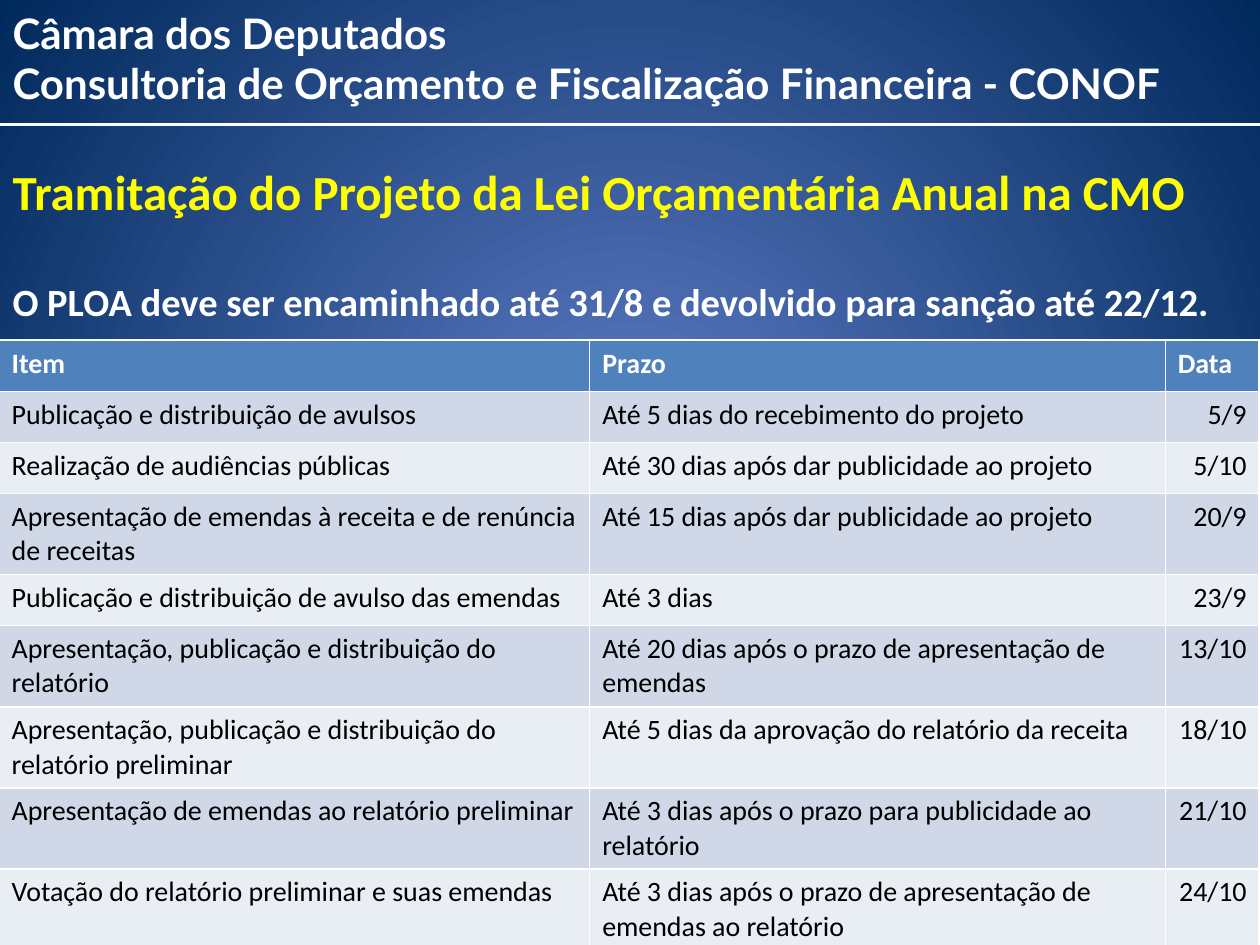
from lxml.etree import SubElement
from pptx import Presentation
from pptx.dml.color import RGBColor
from pptx.enum.shapes import MSO_CONNECTOR
from pptx.enum.text import MSO_ANCHOR, MSO_AUTO_SIZE, PP_ALIGN
from pptx.oxml.ns import qn
from pptx.util import Pt

COLORS = {
    "white": "FFFFFF", "black": "000000", "yellow": "FFFF00",
    "center": "5E7CC5", "edge": "00295C",
    "header": "4F81BD", "odd": "D0D8E8", "even": "E9EDF4",
}
INSTITUTION = [
    "Câmara dos Deputados",
    "Consultoria de Orçamento e Fiscalização Financeira - CONOF",
]
HEADLINE = "Tramitação do Projeto da Lei Orçamentária Anual na CMO"
DEADLINE = "O PLOA deve ser encaminhado até 31/8 e devolvido para sanção até 22/12."
SCHEDULE = [
    ("Item", "Prazo", "Data"),
    ("Publicação e distribuição de avulsos", "Até 5 dias do recebimento do projeto", "5/9"),
    ("Realização de audiências públicas", "Até 30 dias após dar publicidade ao projeto", "5/10"),
    ("Apresentação de emendas à receita e de renúncia de receitas",
     "Até 15 dias após dar publicidade ao projeto", "20/9"),
    ("Publicação e distribuição de avulso das emendas", "Até 3 dias", "23/9"),
    ("Apresentação, publicação e distribuição do relatório",
     "Até 20 dias após o prazo de apresentação de emendas", "13/10"),
    ("Apresentação, publicação e distribuição do relatório preliminar",
     "Até 5 dias da aprovação do relatório da receita", "18/10"),
    ("Apresentação de emendas ao relatório preliminar",
     "Até 3 dias após o prazo para publicidade ao relatório", "21/10"),
    ("Votação do relatório preliminar e suas emendas",
     "Até 3 dias após o prazo de apresentação de emendas ao relatório", "24/10"),
]
WIDTH, HEIGHT = 720, 540
COLUMN_WIDTHS = [337.5, 328.9, 53.7]
ROW_HEIGHT = 29.2
TABLE_TOP = 194.4
RULE_TOP = 71.3


def color(name):
    return RGBColor.from_string(COLORS[name])


def set_all(target, values):
    for name, value in values.items():
        setattr(target, name, value)


def write(para, text, font, size, ink, bold=True, **layout):
    para.text = text
    set_all(para, layout)
    set_all(para.font, {"name": font, "size": Pt(size), "bold": bold})
    para.font.color.rgb = color(ink)


def paint_background(page):
    fill = page.background.fill
    fill.gradient()
    for stop, name in zip(fill.gradient_stops, ("center", "edge")):
        stop.color.rgb = color(name)
    for stop, position in zip(fill.gradient_stops, (0, 1)):
        stop.position = position
    gradient = page.background._cSld.find(".//" + qn("a:gradFill"))
    gradient.remove(gradient.find(qn("a:lin")))
    circle = SubElement(gradient, qn("a:path"), {"path": "circle"})
    SubElement(circle, qn("a:fillToRect"), dict.fromkeys("ltrb", "50000"))


def place(box, top, height):
    set_all(box, {"left": Pt(0), "top": Pt(top), "width": Pt(WIDTH), "height": Pt(height)})
    set_all(box.text_frame, {"word_wrap": True, "auto_size": MSO_AUTO_SIZE.NONE,
                             "vertical_anchor": MSO_ANCHOR.TOP})
    return box.text_frame


def add_institution(page):
    frame = place(page.shapes.title, 0.7, 65.5)
    for index, line in enumerate(INSTITUTION):
        para = frame.add_paragraph() if index else frame.paragraphs[0]
        write(para, line, "Lato", 24, "white", alignment=PP_ALIGN.LEFT, space_before=Pt(0))


def add_body(page):
    frame = place(page.placeholders[1], 88.6, 102.2)
    lines = [(HEADLINE, 28, "yellow", 0), (DEADLINE, 22, "white", 33)]
    for index, (text, size, ink, gap) in enumerate(lines):
        para = frame.add_paragraph() if index else frame.paragraphs[0]
        properties = para._p.get_or_add_pPr()
        set_values = {"marL": "0", "indent": "0"}
        properties.attrib.update(set_values)
        SubElement(properties, qn("a:buNone"))
        write(para, text, "Calibri", size, ink, space_before=Pt(gap))


def add_rule(page):
    rule = page.shapes.add_connector(
        MSO_CONNECTOR.STRAIGHT, Pt(WIDTH), Pt(RULE_TOP), Pt(0), Pt(RULE_TOP))
    rule.line.width = Pt(1.5)
    rule.line.color.rgb = color("white")
    SubElement(rule._element.spPr, qn("a:effectLst"))


def add_schedule(page):
    table = page.shapes.add_table(
        len(SCHEDULE), len(COLUMN_WIDTHS), Pt(-0.5), Pt(TABLE_TOP),
        Pt(sum(COLUMN_WIDTHS)), Pt(ROW_HEIGHT * len(SCHEDULE))).table
    for column, width in zip(table.columns, COLUMN_WIDTHS):
        column.width = Pt(width)
    for row_index, texts in enumerate(SCHEDULE):
        heading = row_index == 0
        band = "header" if heading else ("even", "odd")[row_index % 2]
        for column_index, text in enumerate(texts):
            cell = table.cell(row_index, column_index)
            cell.fill.solid()
            cell.fill.fore_color.rgb = color(band)
            is_date = column_index == 2 and not heading
            write(cell.text_frame.paragraphs[0], text, "Calibri", 16,
                  "white" if heading else "black", heading,
                  alignment=PP_ALIGN.RIGHT if is_date else PP_ALIGN.LEFT)


def main():
    """Build the slide on the budget bill's deadlines."""
    deck = Presentation()
    set_all(deck, {"slide_width": Pt(WIDTH), "slide_height": Pt(HEIGHT)})
    page = deck.slides.add_slide(deck.slide_layouts[1])
    paint_background(page)
    add_body(page)
    add_schedule(page)
    add_institution(page)
    add_rule(page)
    deck.save("out.pptx")


if __name__ == "__main__":
    main()
